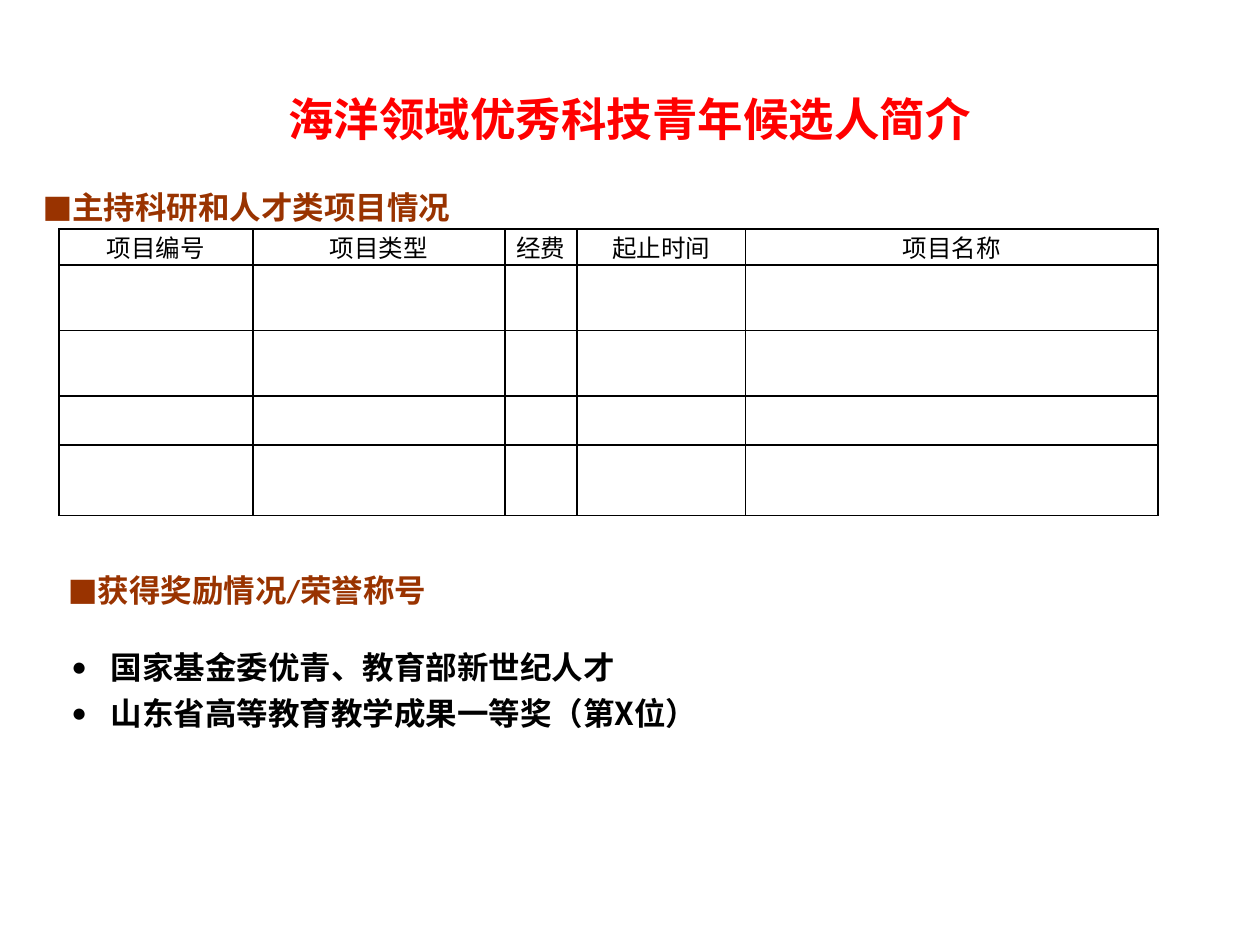
"""Build a slide introducing a young marine science candidate."""
from lxml import etree
from pptx import Presentation
from pptx.dml.color import RGBColor
from pptx.enum.text import MSO_ANCHOR, MSO_AUTO_SIZE, PP_ALIGN
from pptx.oxml.ns import qn
from pptx.util import Cm, Pt

CENTER = PP_ALIGN.CENTER
MIDDLE = MSO_ANCHOR.MIDDLE
GROW = MSO_AUTO_SIZE.SHAPE_TO_FIT_TEXT
CJK = "Noto Sans CJK SC"
LATIN = "Calibri"
BLACK, BROWN, RED = "000000", "993300", "FF0000"


def style(paragraph, size, font, color, bold):
    for run in paragraph.runs:
        run.font.size = Pt(size)
        run.font.name = font
        run.font.bold = bold
        run.font.color.rgb = RGBColor.from_string(color)
        east_asian = etree.SubElement(run.font._element, qn("a:ea"))
        east_asian.set("typeface", CJK)


def add_bullet(paragraph, char, indent):
    properties = paragraph._p.get_or_add_pPr()
    properties.set("marL", str(indent))
    properties.set("indent", str(-indent))
    etree.SubElement(properties, qn("a:buFont")).set("typeface", LATIN)
    etree.SubElement(properties, qn("a:buChar")).set("char", char)


prs = Presentation()
prs.slide_width, prs.slide_height = Cm(25.4), Cm(19.05)
slide = prs.slides.add_slide(prs.slide_layouts[6])

headers = ["项目编号", "项目类型", "经费", "起止时间", "项目名称"]
column_widths = [3.91, 5.08, 1.45, 3.4, 8.31]
row_heights = [0.72, 1.32, 1.32, 0.99, 1.42]
projects = slide.shapes.add_table(
    len(row_heights), len(headers), Cm(1.19), Cm(4.62),
    Cm(sum(column_widths)), Cm(sum(row_heights))).table
for column, width in zip(projects.columns, column_widths):
    column.width = Cm(width)
for row, height in zip(projects.rows, row_heights):
    row.height = Cm(height)
for cell, header in zip(projects.rows[0].cells, headers):
    cell.text_frame.text = header
    cell.text_frame.paragraphs[0].alignment = CENTER
    style(cell.text_frame.paragraphs[0], 14, CJK, BLACK, False)
for cell in projects.iter_cells():
    cell.vertical_anchor = MIDDLE
    cell.margin_left = cell.margin_right = Cm(0.18)
    cell.margin_top = cell.margin_bottom = 0
    properties = cell._tc.get_or_add_tcPr()
    for side in ("lnL", "lnR", "lnT", "lnB"):
        border = etree.SubElement(properties, qn(f"a:{side}"), w=str(Pt(1)))
        line_fill = etree.SubElement(border, qn("a:solidFill"))
        etree.SubElement(line_fill, qn("a:srgbClr"), val=BLACK)
    cell.fill.background()

headings = [
    ("主持科研和人才类项目情况", 0.61, 3.28, 9.65, 1.55, False),
    ("获得奖励情况/荣誉称号", 1.12, 11, 9.27, 1.27, True),
]
for text, left, top, width, height, wrap in headings:
    heading = slide.shapes.add_textbox(
        Cm(left), Cm(top), Cm(width), Cm(height)).text_frame
    heading.word_wrap = wrap
    heading.auto_size = GROW
    heading.text = text
    heading.paragraphs[0].line_spacing = 1.5
    style(heading.paragraphs[0], 18, LATIN, BROWN, True)
    add_bullet(heading.paragraphs[0], "■", 0)

awards = slide.shapes.add_textbox(
    Cm(1.19), Cm(12.93), Cm(18.14), Cm(3.33)).text_frame
awards.word_wrap = True
awards.auto_size = GROW
awards.text = "国家基金委优青、教育部新世纪人才\n山东省高等教育教学成果一等奖（第X位）"
for award in awards.paragraphs:
    award.space_before = Pt(5)
    style(award, 18, CJK, BLACK, True)
    add_bullet(award, "•", Cm(0.79))

title = slide.shapes.add_textbox(
    Cm(1.27), Cm(1.83), Cm(22.86), Cm(1.63)).text_frame
title.word_wrap = True
title.text = "海洋领域优秀科技青年候选人简介"
title.paragraphs[0].alignment = CENTER
title.paragraphs[0].line_spacing = 0.9
style(title.paragraphs[0], 26, LATIN, RED, True)

prs.save("out.pptx")
